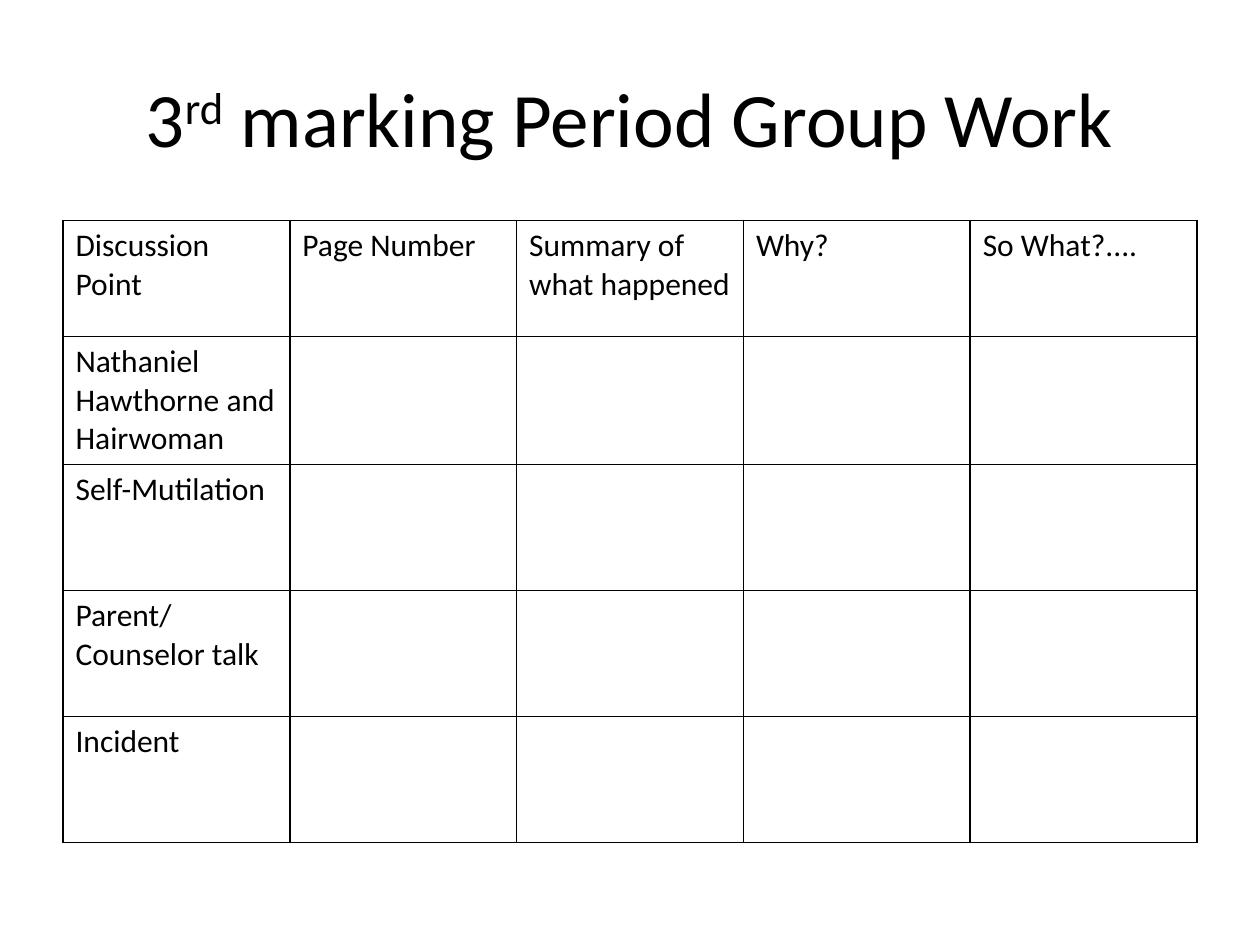
"""Build a group-work slide with a title and a discussion table."""
from dataclasses import dataclass

from lxml import etree
from pptx import Presentation, util as u
from pptx.dml.color import RGBColor
from pptx.enum import text as t
from pptx.oxml.ns import qn


@dataclass(frozen=True)
class Theme:
    font: str = "Calibri"
    ink: str = "000000"
    title_size: int = 44
    cell_size: int = 18
    border_width: float = 1


@dataclass(frozen=True)
class Box:
    left: float
    top: float
    width: float
    height: float

    def emu(self) -> tuple:
        return tuple(u.Inches(n) for n in (self.left, self.top, self.width, self.height))


@dataclass(frozen=True)
class Part:
    words: str
    baseline: int = 0


THEME = Theme()
WIDTH, HEIGHT = 10, 7.5
MARGIN = WIDTH * 0.05
TITLE_BOX = Box(MARGIN, HEIGHT * 0.04, WIDTH - 2 * MARGIN, 1.25)
HEADER_HEIGHT, ROW_HEIGHT = 0.92, 1
TITLE = (Part("3"), Part("rd", 30), Part(" marking Period Group Work"))
HEADINGS = ("Discussion Point", "Page Number", "Summary of what happened", "Why?", "So What?....")
TOPICS = ("Nathaniel Hawthorne and Hairwoman", "Self-Mutilation",
          "Parent/\nCounselor talk", "Incident")
TABLE_BOX = Box(MARGIN, 1.75, WIDTH - 2 * MARGIN, HEADER_HEIGHT + ROW_HEIGHT * len(TOPICS))


def style(paragraph, size: int) -> None:
    font = paragraph.font
    font.name, font.size = THEME.font, u.Pt(size)
    font.color.rgb = RGBColor.from_string(THEME.ink)


def draw_title(title, parts: tuple[Part, ...]) -> None:
    title.left, title.top, title.width, title.height = TITLE_BOX.emu()
    title.text_frame.vertical_anchor = t.MSO_ANCHOR.MIDDLE
    heading = title.text_frame.paragraphs[0]
    heading.alignment = t.PP_ALIGN.CENTER
    style(heading, THEME.title_size)
    for part in parts:
        run = heading.add_run()
        run.text = part.words
        if part.baseline:
            run._r.get_or_add_rPr().set("baseline", str(part.baseline * 1000))


def draw_borders(cell) -> None:
    properties = cell._tc.get_or_add_tcPr()
    for side in ("lnL", "lnR", "lnT", "lnB"):
        line = etree.SubElement(properties, qn(f"a:{side}"), w=str(u.Pt(THEME.border_width)))
        fill = etree.SubElement(line, qn("a:solidFill"))
        etree.SubElement(fill, qn("a:srgbClr"), val=THEME.ink)


def draw_cell(cell, words: str) -> None:
    cell.text = words
    for paragraph in cell.text_frame.paragraphs:
        style(paragraph, THEME.cell_size)
    draw_borders(cell)
    cell.fill.background()


def draw_table(slide) -> None:
    rows = [HEADINGS] + [(topic,) + ("",) * (len(HEADINGS) - 1) for topic in TOPICS]
    table = slide.shapes.add_table(len(rows), len(HEADINGS), *TABLE_BOX.emu()).table
    table.first_row = table.horz_banding = False
    for index, words in enumerate(rows):
        table.rows[index].height = u.Inches(ROW_HEIGHT if index else HEADER_HEIGHT)
        for cell, content in zip(table.rows[index].cells, words):
            draw_cell(cell, content)


def main() -> None:
    deck = Presentation()
    deck.slide_width, deck.slide_height = u.Inches(WIDTH), u.Inches(HEIGHT)
    slide = deck.slides.add_slide(deck.slide_layouts.get_by_name("Title Only"))
    draw_title(slide.shapes.title, TITLE)
    draw_table(slide)
    deck.save("out.pptx")


if __name__ == "__main__":
    main()
